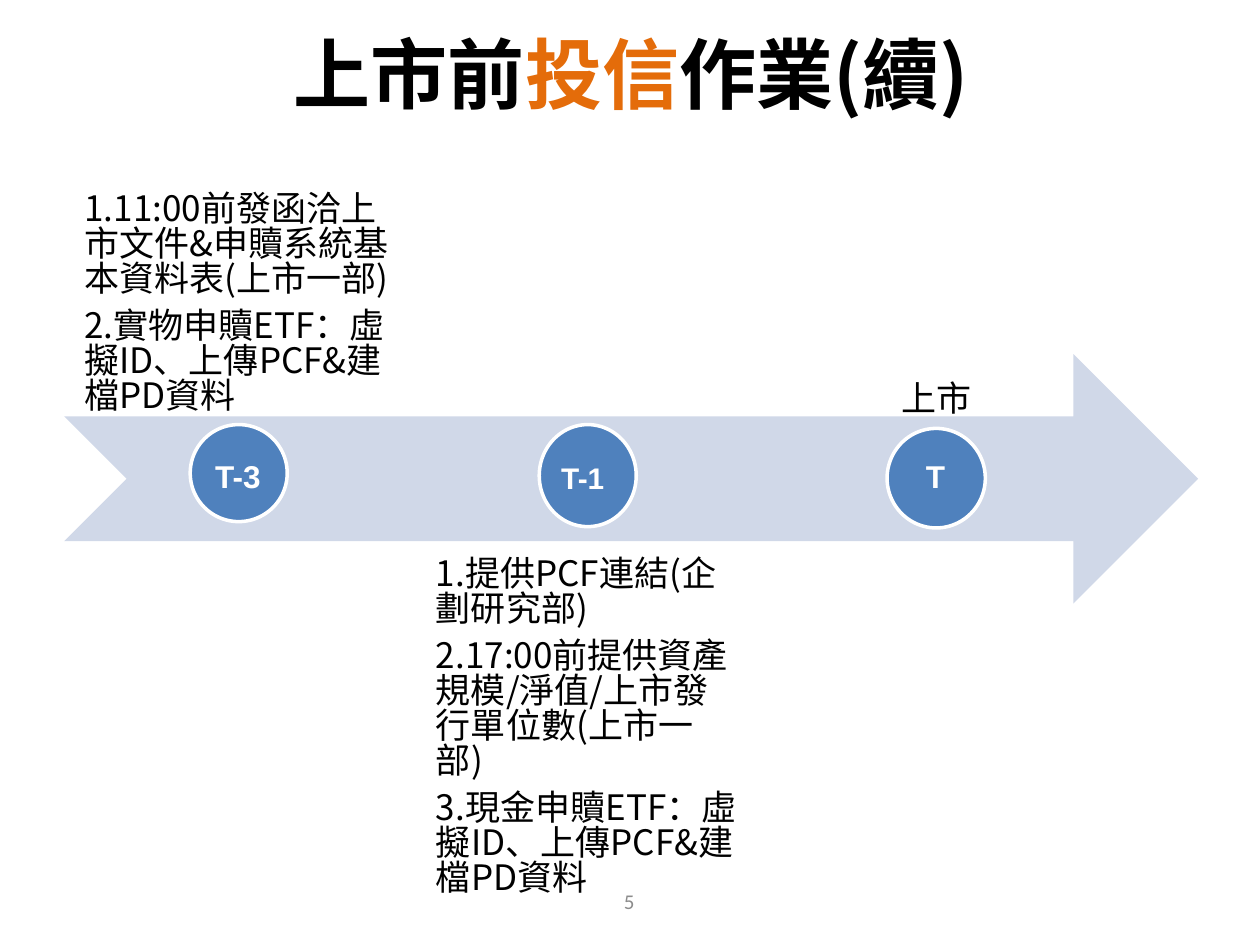
from lxml import etree
from pptx import Presentation
from pptx.dml.color import RGBColor
from pptx.enum.shapes import MSO_SHAPE
from pptx.enum.text import MSO_ANCHOR, MSO_AUTO_SIZE, PP_ALIGN
from pptx.oxml.ns import qn
from pptx.util import Pt

ARROW, OVAL = MSO_SHAPE.NOTCHED_RIGHT_ARROW, MSO_SHAPE.OVAL
TOP, MID, LOW = MSO_ANCHOR.TOP, MSO_ANCHOR.MIDDLE, MSO_ANCHOR.BOTTOM
LEFT, MIDDLE = PP_ALIGN.LEFT, PP_ALIGN.CENTER
FIXED = MSO_AUTO_SIZE.NONE
PX = 9144
HUES = {"ink": "000000", "accent": "E46C0A", "band": "D0D8E8",
        "dot": "4F81BD", "white": "FFFFFF", "gray": "8C8C8C"}
CJK = "Noto Sans CJK SC"
HEAD = {"name": CJK, "size": Pt(44), "bold": True}
NOTE = {"name": CJK, "size": Pt(20), "bold": False}
PAGE = {"name": "Calibri", "size": Pt(12)}
MARK = {"name": "Arial", "size": Pt(18), "bold": True}
SMALL = {**MARK, "size": Pt(17)}
FLOW = {"line_spacing": Pt(20), "space_before": Pt(0), "space_after": Pt(7)}


def apply(item, values):
    """Set each named value on the item."""
    for key, value in values.items():
        setattr(item, key, value)


class Deck:
    """Holds the style and the current slide."""

    def __init__(self, wide, high):
        """Open a deck with one two-list slide."""
        self.show = Presentation()
        self.show.slide_width, self.show.slide_height = wide * PX, high * PX
        self.slide = self.show.slides.add_slide(self.show.slide_layouts[3])

    def hue(self, name):
        """Return a colour by name."""
        return RGBColor.from_string(HUES[name])

    def place(self, item, box):
        """Move and size an item in px."""
        keys = ("left", "top", "width", "height")
        apply(item, dict(zip(keys, (n * PX for n in box))))

    def frame(self, item, anchor, pad=None):
        """Set up a text frame and return it."""
        frame = item.text_frame
        apply(frame, {"word_wrap": True, "auto_size": FIXED,
                      "vertical_anchor": anchor})
        if pad is not None:
            sides = ("left", "right", "top", "bottom")
            apply(frame, {f"margin_{side}": pad * PX for side in sides})
        return frame

    def run(self, para, text, font, hue):
        """Add one formatted run."""
        run = para.add_run()
        run.text = text
        apply(run.font, font)
        run.font.color.rgb = self.hue(hue)
        if font["name"] == CJK:
            props = run.font._element if hasattr(run.font, "_element") else run._r.get_or_add_rPr()
            etree.SubElement(props, qn("a:ea")).set("typeface", CJK)

    def title(self, box, parts):
        """Fill the title with coloured parts."""
        item = self.slide.shapes.title
        self.place(item, box)
        para = self.frame(item, MID).paragraphs[0]
        para.alignment = MIDDLE
        for text, hue in parts:
            self.run(para, text, HEAD, hue)

    def notes(self, slot, box, anchor, lines):
        """Fill a body placeholder with numbered steps."""
        item = self.slide.placeholders[slot]
        self.place(item, box)
        frame = self.frame(item, anchor, 16)
        for i, line in enumerate(lines):
            para = frame.add_paragraph() if i else frame.paragraphs[0]
            props = para._p.get_or_add_pPr()
            props.set("marL", "0")
            props.set("indent", "0")
            etree.SubElement(props, qn("a:buNone"))
            apply(para, {**FLOW, "alignment": LEFT})
            self.run(para, line, NOTE, "ink")

    def label(self, box, text, font, hue, align=MIDDLE, anchor=TOP, pad=None, flow=None):
        """Add a one-line text box."""
        item = self.slide.shapes.add_textbox(*(n * PX for n in box))
        para = self.frame(item, anchor, pad).paragraphs[0]
        apply(para, {**(flow or {}), "alignment": align})
        self.run(para, text, font, hue)

    def shape(self, kind, box, fill, edge=None):
        """Add a filled shape with an optional edge."""
        item = self.slide.shapes.add_shape(kind, *(n * PX for n in box))
        item.shadow.inherit = False
        item.fill.solid()
        item.fill.fore_color.rgb = self.hue(fill)
        if edge:
            item.line.color.rgb = self.hue(edge)
            item.line.width = Pt(2)
        else:
            item.line.fill.background()


def main():
    """Build the listing timeline."""
    deck = Deck(1000, 750)
    deck.title((51, 0, 900, 115),
               [("上市前", "ink"), ("投信", "accent"), ("作業(續)", "ink")])
    deck.shape(ARROW, (51, 281, 900, 198), "band")
    deck.notes(1, (51, 148, 289, 198), LOW, [
        "1.11:00前發函洽上市文件&申贖系統基本資料表(上市一部)",
        "2.實物申贖ETF：虛擬ID、上傳PCF&建檔PD資料"])
    deck.notes(2, (330, 427, 271, 198), TOP, [
        "1.提供PCF連結(企劃研究部)",
        "2.17:00前提供資產規模/淨值/上市發行單位數(上市一部)",
        "3.現金申贖ETF：虛擬ID、上傳PCF&建檔PD資料"])
    deck.label((626, 150, 235, 198), "上市", NOTE, "ink",
               anchor=LOW, pad=16, flow=FLOW)
    stops = [
        ((151, 337, 77, 77), (161, 358, 63, 40), "T-3", MARK, LEFT),
        ((428, 337, 77, 81), (413, 360, 99, 39), "T-1", SMALL, MIDDLE),
        ((704, 340, 78, 79), (725, 358, 47, 40), "T", MARK, LEFT)]
    for dot, box, text, font, align in stops:
        deck.shape(OVAL, dot, "dot", "white")
        deck.label(box, text, font, "white", align)
    deck.label((383, 695, 233, 40), "5", PAGE, "gray", anchor=MID)
    deck.show.save("out.pptx")


if __name__ == "__main__":
    main()
